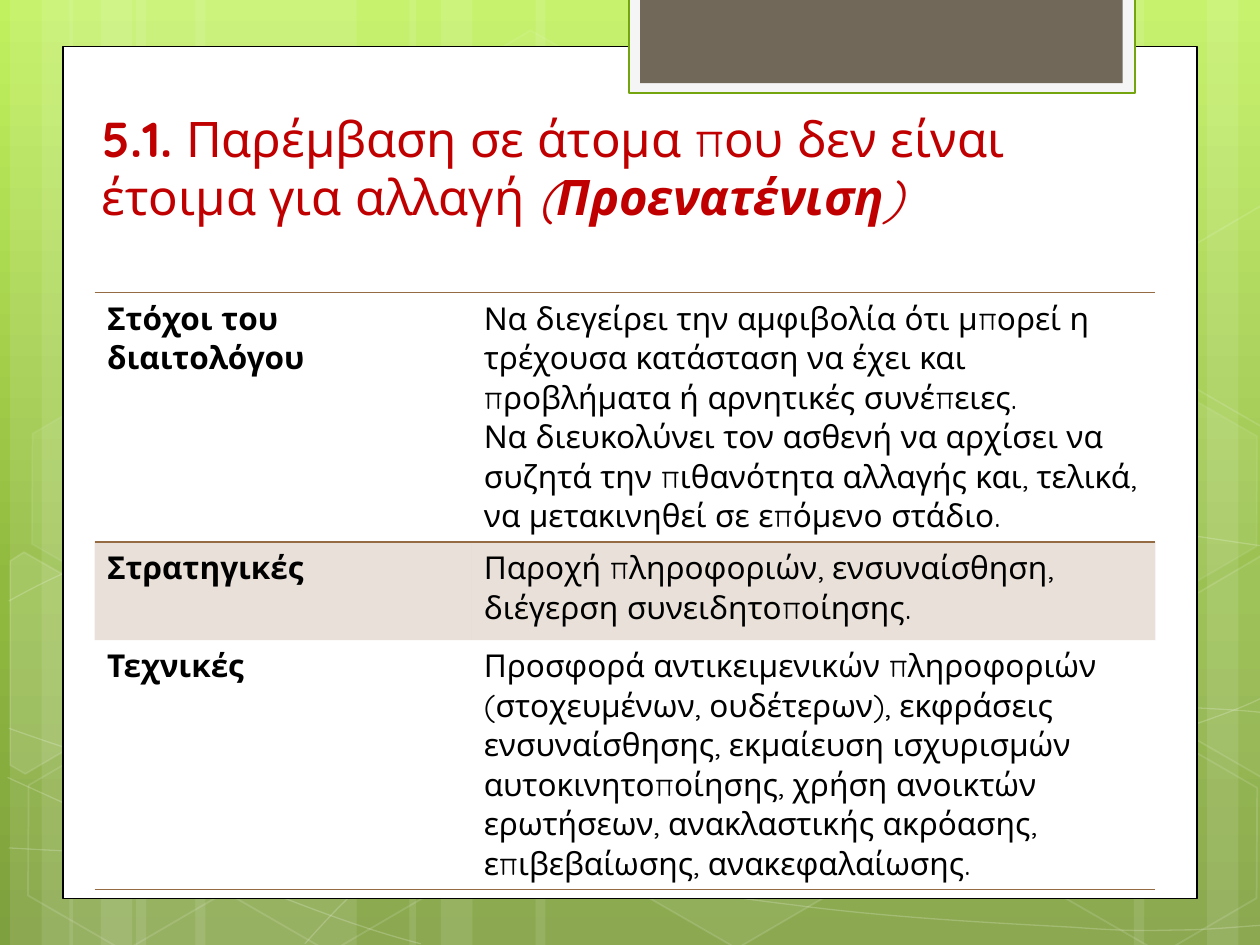
from math import cos, radians, sin

from lxml import etree
from pptx import Presentation
from pptx.dml.color import RGBColor
from pptx.enum.shapes import MSO_SHAPE
from pptx.enum.text import MSO_ANCHOR
from pptx.oxml import parse_xml
from pptx.oxml.ns import nsdecls, qn
from pptx.util import Inches, Pt

COLORS = {
    "white": "FFFFFF", "black": "000000", "red": "C00000",
    "brown": "956B43", "tab": "71685A", "tab_edge": "F5F5F5", "green": "74A50F",
    "top": "C1F15E", "middle": "90BA3F", "bottom": "7FA03E",
}
NO_GRID_STYLE = "{2D5ABB26-0587-4C30-8999-92F81FD0307C}"
TILT = 30


class SlideBuilder:
    """Holds the style and the current slide."""

    font_name = "Quicksand"

    def __init__(self, page):
        self.page = page

    def paint(self, fill, color, alpha=100):
        fill.solid()
        fill.fore_color.rgb = RGBColor.from_string(COLORS[color])
        if alpha < 100:
            element = fill._xPr.find(qn("a:solidFill"))[0]
            etree.SubElement(element, qn("a:alpha"), val=str(alpha * 1000))

    def style(self, shape, fill=None, line=None):
        """Fill is (color, alpha); line is (color, width, alpha)."""
        shape.shadow.inherit = False
        if fill:
            self.paint(shape.fill, *fill)
        else:
            shape.fill.background()
        if line:
            color, width, alpha = line
            shape.line.width = Pt(width)
            self.paint(shape.line.fill, color, alpha)
        else:
            shape.line.fill.background()

    def background(self, stops):
        fill = self.page.background.fill
        fill.gradient()
        fill.gradient_angle = 270
        stop_list = next(self.page._element.iter(qn("a:gsLst")))
        for stop in list(stop_list):
            stop_list.remove(stop)
        for position, color in stops:
            stop = etree.SubElement(stop_list, qn("a:gs"), pos=str(position * 1000))
            etree.SubElement(stop, qn("a:srgbClr"), val=COLORS[color])

    def shape(self, kind, area, fill=None, line=None):
        shape = self.page.shapes.add_shape(kind, *map(Inches, area))
        self.style(shape, fill, line)
        return shape

    def hexagon(self, left, top, fill_alpha, line_alpha):
        fill = ("white", fill_alpha) if fill_alpha else None
        shape = self.shape(MSO_SHAPE.HEXAGON, (left, top, 1.75, 1.52), fill,
                           ("white", 1, line_alpha))
        shape.adjustments[0] = 0.285
        shape.rotation = TILT

    def outline(self, points, fill=None, line=None, close=False):
        points = [(Inches(x), Inches(y)) for x, y in points]
        builder = self.page.shapes.build_freeform(*points[0])
        builder.add_line_segments(points[1:], close=close)
        shape = builder.convert_to_shape()
        self.style(shape, fill, line)
        return shape

    def cut_hexagon(self, center, points, alpha):
        """Draw the corners turned back around the center, then tilt the shape."""
        x0, y0 = center
        c, s = cos(radians(TILT)), sin(radians(TILT))
        level = [(x0 + (x - x0) * c + (y - y0) * s, y0 - (x - x0) * s + (y - y0) * c)
                 for x, y in points]
        shape = self.outline(level, ("white", alpha) if alpha else None,
                             ("white", 1, 12), close=True)
        shape.rotation = TILT

    def curve(self, knots):
        """Join cubic curves: a start, then two controls and an end for each."""
        shape = self.outline(knots, line=("white", 0.75, 20))
        segments = list(shape._element.iter(qn("a:lnTo")))
        for first in range(0, len(segments), 3):
            cubic = etree.Element(qn("a:cubicBezTo"))
            segments[first].addprevious(cubic)
            for segment in segments[first:first + 3]:
                cubic.append(segment[0])
                segment.getparent().remove(segment)

    def span(self, para, text, size, color, bold=False, italic=False):
        span = para.add_run()
        span.text = text
        span.font.name = self.font_name
        span.font.size = Pt(size)
        span.font.bold = bold
        span.font.italic = italic
        span.font.color.rgb = RGBColor.from_string(COLORS[color])

    def title(self, area, spans):
        box = self.page.shapes.add_textbox(*map(Inches, area))
        frame = box.text_frame
        frame.word_wrap = True
        frame.vertical_anchor = MSO_ANCHOR.BOTTOM
        for text, bold, italic in spans:
            self.span(frame.paragraphs[0], text, 28, "red", bold, italic)

    def border(self, cell, sides):
        """Sides run from top to bottom, as (tag, visible)."""
        for index, (side, visible) in enumerate(sides):
            paint = (f'<a:solidFill><a:srgbClr val="{COLORS["brown"]}"/></a:solidFill>'
                     if visible else "<a:noFill/>")
            cell._tc.get_or_add_tcPr().insert(index, parse_xml(
                f'<a:{side} {nsdecls("a")} w="12700">{paint}</a:{side}>'))

    def table(self, left, top, widths, heights, rows, borders):
        table = self.page.shapes.add_table(
            len(rows), len(widths), Inches(left), Inches(top),
            Inches(sum(widths)), Inches(sum(heights))).table
        table.first_row = table.horz_banding = False
        table._tbl.tblPr.find(qn("a:tableStyleId")).text = NO_GRID_STYLE
        for column, width in zip(table.columns, widths):
            column.width = Inches(width)
        for number, (label, paragraphs) in enumerate(rows):
            table.rows[number].height = Inches(heights[number])
            for column, texts in enumerate(([label], paragraphs)):
                cell = table.cell(number, column)
                if number % 2:
                    self.paint(cell.fill, "brown", 20)
                else:
                    cell.fill.background()
                self.border(cell, borders[number])
                frame = cell.text_frame
                for index, text in enumerate(texts):
                    para = frame.add_paragraph() if index else frame.paragraphs[0]
                    self.span(para, text, 18, "black", bold=column == 0)


# Left and width of each vertical light band
BANDS = [(1.08, 1.75), (0.08, 0.5), (0.33, 0.83), (1.55, 1.75), (0.55, 0.5), (0.8, 0.83),
         (7.33, 1.75), (9.58, 0.5), (9, 0.83), (4.25, 3.08), (3.25, 0.5), (3.5, 0.83)]
CURVES = [
    [(0.07, 6.73), (0.61, 6.76), (1.15, 6.79), (1.9, 6.78), (2.65, 6.77), (3.58, 6.75),
     (4.58, 6.65), (5.58, 6.55), (7, 6.36), (7.92, 6.17), (8.83, 5.98), (9.77, 5.68),
     (10.07, 5.51)],
    [(0.07, 4.77), (0.36, 4.61), (0.65, 4.46), (1.21, 4.31), (1.78, 4.16), (2.59, 3.94),
     (3.47, 3.87), (4.36, 3.8), (5.44, 3.79), (6.54, 3.87), (7.64, 3.95), (9.47, 4.26),
     (10.07, 4.34)],
    [(0.06, 6.17), (1.27, 6.72), (2.47, 7.27), (3.34, 7.49)],
    [(0.07, 5.78), (0.38, 5.89), (0.7, 6), (1.28, 6.16), (1.86, 6.31), (2.73, 6.56),
     (3.57, 6.73), (4.4, 6.9), (5.45, 7.08), (6.28, 7.18), (7.11, 7.29), (8, 7.33),
     (8.53, 7.36), (9.05, 7.4), (9.19, 7.38), (9.45, 7.38), (9.71, 7.37), (9.89, 7.35),
     (10.07, 7.34)],
    [(2.42, 7.49), (2.6, 7.29), (2.78, 7.09), (3.02, 6.91), (3.26, 6.73), (3.6, 6.53),
     (3.88, 6.39), (4.16, 6.25), (4.33, 6.19), (4.7, 6.09), (5.06, 5.99), (5.73, 5.85),
     (6.08, 5.78), (6.44, 5.71), (6.49, 5.71), (6.8, 5.69), (7.11, 5.66), (7.6, 5.63),
     (7.94, 5.62), (8.29, 5.61), (8.86, 5.62), (8.86, 5.62), (8.86, 5.62), (9.53, 5.62),
     (9.53, 5.62), (9.71, 5.63), (9.88, 5.64), (9.97, 5.65), (10.06, 5.66), (10.03, 5.65),
     (10.06, 5.66)],
]
# Left, top, fill opacity and line opacity
HEXAGONS = [(3.34, 0.36, 4, 8), (4.97, 5.89, 6, 12), (0.11, 5.91, 0, 12),
            (0.14, 3.12, 7, 8), (1.74, 5.92, 0, 12), (7.53, 4.53, 10, 12),
            (8.34, 5.93, 0, 12), (8.34, 3.14, 7, 8)]
# Hexagons cut by the slide edge: center, corners and fill opacity
CUT_HEXAGONS = [
    ((0.36, 5.35), [(0.08, 4.45), (0.19, 4.38), (0.96, 4.82), (0.95, 5.7), (0.2, 6.14),
                    (0.08, 6.07)], 10),
    ((9.85, 5.2), [(9.26, 4.85), (10.01, 4.41), (10.09, 4.46), (10.09, 6.13),
                   (10.02, 6.17), (9.26, 5.73)], 4),
    ((9.85, 2.41), [(9.26, 2.07), (10.01, 1.63), (10.1, 1.68), (10.09, 3.35),
                    (10.02, 3.39), (9.26, 2.95)], 0),
]
TITLE = [("5.1. ", True, False),
         ("Παρέμβαση σε άτομα που δεν είναι έτοιμα για αλλαγή ", False, False),
         ("(", False, True), ("Προενατένιση", True, True), (")", False, True)]
ROWS = [
    ("Στόχοι του διαιτολόγου", [
        "Να διεγείρει την αμφιβολία ότι μπορεί η τρέχουσα κατάσταση να έχει και "
        "προβλήματα ή αρνητικές συνέπειες.",
        "Να διευκολύνει τον ασθενή να αρχίσει να συζητά την πιθανότητα αλλαγής και, "
        "τελικά, να μετακινηθεί σε επόμενο στάδιο."]),
    ("Στρατηγικές", ["Παροχή πληροφοριών, ενσυναίσθηση, διέγερση συνειδητοποίησης."]),
    ("Τεχνικές", [
        "Προσφορά αντικειμενικών πληροφοριών (στοχευμένων, ουδέτερων), εκφράσεις "
        "ενσυναίσθησης, εκμαίευση ισχυρισμών αυτοκινητοποίησης, χρήση ανοικτών "
        "ερωτήσεων, ανακλαστικής ακρόασης, επιβεβαίωσης, ανακεφαλαίωσης."]),
]
BORDERS = [[("lnT", True), ("lnB", True)], [("lnB", False)],
           [("lnT", False), ("lnB", True)]]


def main():
    deck = Presentation()
    deck.slide_width, deck.slide_height = Inches(10), Inches(7.5)
    builder = SlideBuilder(deck.slides.add_slide(deck.slide_layouts[6]))

    # Backdrop
    builder.background([(0, "top"), (62, "middle"), (100, "bottom")])
    for left, width in BANDS:
        builder.shape(MSO_SHAPE.RECTANGLE, (left, 0, width, 7.5), ("white", 10))
    for knots in CURVES:
        builder.curve(knots)
    for hexagon in HEXAGONS:
        builder.hexagon(*hexagon)
    for cut_hexagon in CUT_HEXAGONS:
        builder.cut_hexagon(*cut_hexagon)

    # Sheet and tab
    for area, color, line in [((0.5, 0.37, 9, 6.76), "white", ("black", 0.75, 100)),
                              ((4.99, -0.02, 4.02, 0.76), "tab_edge", ("green", 1.25, 100)),
                              ((5.08, -0.02, 3.83, 0.68), "tab", None)]:
        builder.shape(MSO_SHAPE.RECTANGLE, area, (color,), line)

    # Title and table
    builder.title((0.71, 0.59, 7.68, 1.25), TITLE)
    builder.table(0.75, 2.32, (2.99, 5.43), (1.98, 0.78, 1.98), ROWS, BORDERS)
    deck.save("out.pptx")


if __name__ == "__main__":
    main()
